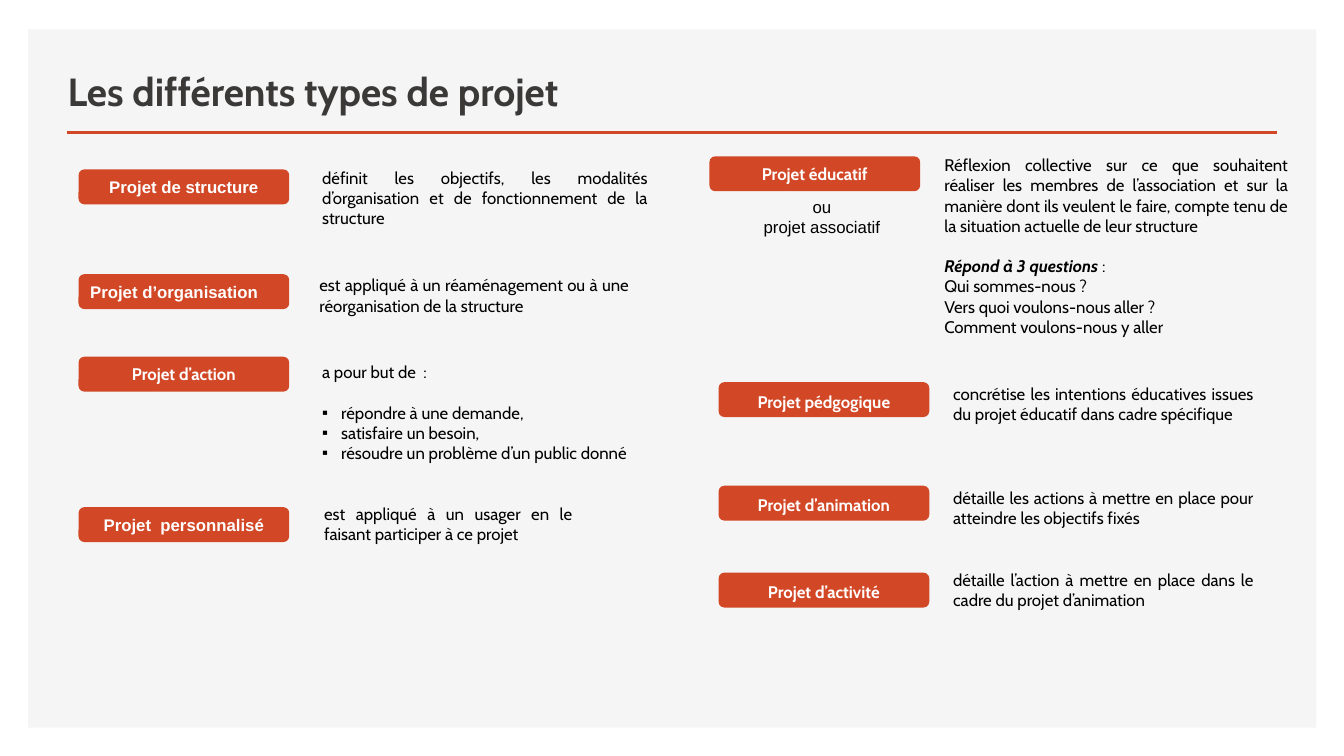
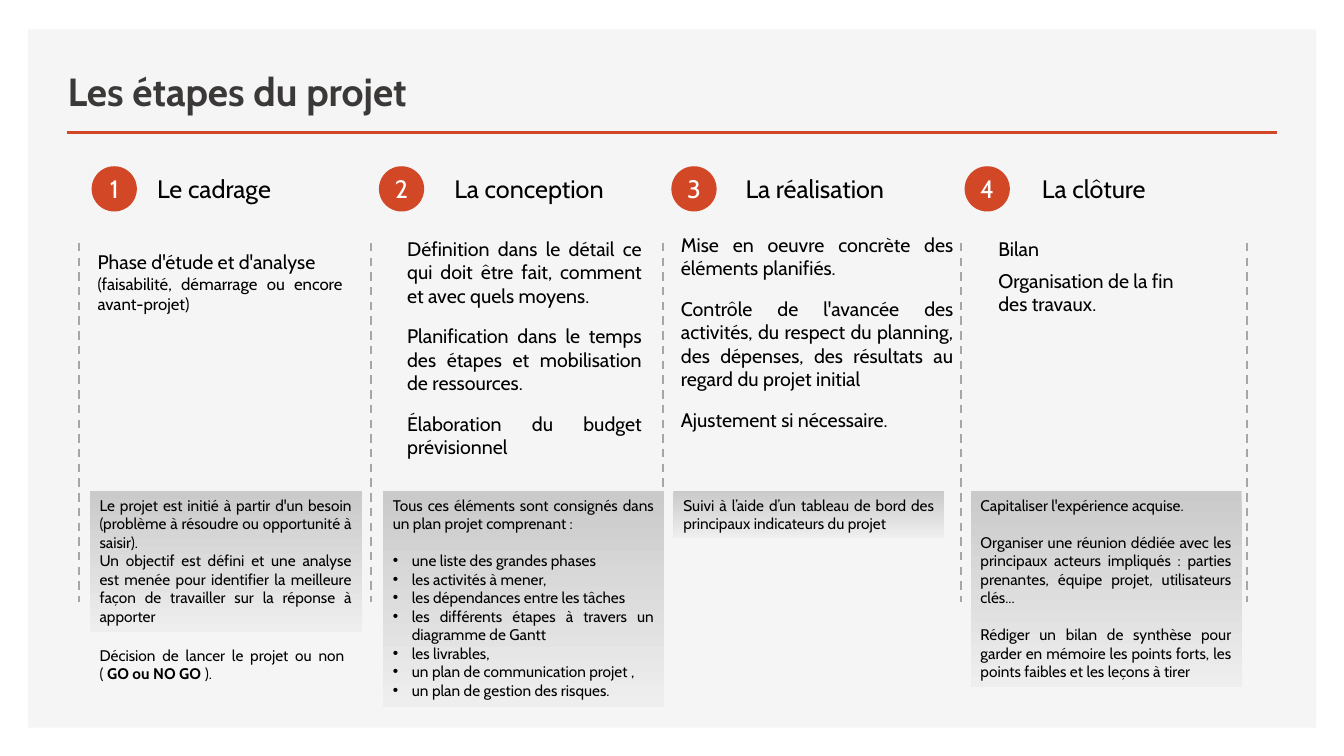
"""Build two slides on project types and project stages."""
from lxml import etree
from pptx import Presentation
from pptx.dml.color import RGBColor
from pptx.enum.dml import MSO_LINE
from pptx.enum.shapes import MSO_CONNECTOR, MSO_SHAPE
from pptx.enum.text import MSO_ANCHOR, PP_ALIGN
from pptx.oxml.ns import qn
from pptx.util import Cm, Pt

RECTANGLE, ROUNDED, OVAL = MSO_SHAPE.RECTANGLE, MSO_SHAPE.ROUNDED_RECTANGLE, MSO_SHAPE.OVAL
STRAIGHT = MSO_CONNECTOR.STRAIGHT
DASH = MSO_LINE.DASH
TOP, MIDDLE, BOTTOM = MSO_ANCHOR.TOP, MSO_ANCHOR.MIDDLE, MSO_ANCHOR.BOTTOM
LEFT, CENTER, JUSTIFY = PP_ALIGN.LEFT, PP_ALIGN.CENTER, PP_ALIGN.JUSTIFY

ORANGE = RGBColor(0xD2, 0x47, 0x26)
PANEL = RGBColor(0xF5, 0xF5, 0xF5)
TITLE_GREY = RGBColor(0x3B, 0x38, 0x38)
DASH_GREY = RGBColor(0xA6, 0xA6, 0xA6)
NOTE_DARK = RGBColor(0xCA, 0xCA, 0xCA)
NOTE_LIGHT = RGBColor(0xEE, 0xEE, 0xEE)
BLACK = RGBColor(0, 0, 0)
WHITE = RGBColor(0xFF, 0xFF, 0xFF)
FONT, LABEL_FONT = "Cabin", "Arial"
BULLETS = ("▪", "•")


def add_line(slide, start, end, color, width):
    """Draw a straight line between two points given in centimetres."""
    line = slide.shapes.add_connector(STRAIGHT, *map(Cm, start + end))
    line.line.color.rgb = color
    line.line.width = Pt(width)
    etree.SubElement(line._element.spPr, qn("a:effectLst"))
    return line


def add_block(slide, box, texts, kind=None, fill=None, size=12, font=FONT, color=BLACK,
              align=JUSTIFY, bold=False, gaps=(), indent=0):
    """Add a text box or filled shape; *stars* mark bold, a leading bullet makes a list item."""
    if kind is None:
        shape = slide.shapes.add_textbox(*map(Cm, box))
    else:
        shape = slide.shapes.add_shape(kind, *map(Cm, box))
        shape.shadow.inherit = False
        shape.line.fill.background()
        if fill is None:
            shape.fill.gradient()
            shape.fill.gradient_angle = 270
            for stop, stop_color in zip(shape.fill.gradient_stops, (NOTE_DARK, NOTE_LIGHT)):
                stop.color.rgb = stop_color
        else:
            shape.fill.solid()
            shape.fill.fore_color.rgb = fill
    frame = shape.text_frame
    frame.word_wrap = True
    frame.vertical_anchor = MIDDLE if fill else TOP
    frame.margin_left = Cm(0.25 + indent)
    for index, text in enumerate(texts):
        paragraph = frame.paragraphs[0] if index == 0 else frame.add_paragraph()
        paragraph.alignment = align
        if index in gaps:
            paragraph.space_before = Pt(gaps[index])
        if text.startswith(BULLETS):
            properties = paragraph._p.get_or_add_pPr()
            properties.set("marL", str(Cm(0.48)))
            properties.set("indent", str(-Cm(0.48)))
            etree.SubElement(properties, qn("a:buFont")).set("typeface", "Arial")
            etree.SubElement(properties, qn("a:buChar")).set("char", text[0])
            text = text[1:]
        for part, words in enumerate(text.split("*")):
            if words:
                run = paragraph.add_run()
                run.text = words
                run.font.name = font
                run.font.size = Pt(size)
                run.font.color.rgb = color
                run.font.bold = bold or part % 2 == 1
    return shape


presentation = Presentation()
presentation.slide_width = Cm(33.87)
presentation.slide_height = Cm(19.05)
layout = presentation.slide_layouts[5]
layout_title = layout.placeholders[0]
layout_title.left, layout_title.top = Cm(1.45), Cm(1.24)
layout_title.width, layout_title.height = Cm(24.13), Cm(1.78)

slides = []
for heading in ("Les différents types de projet", "Les étapes du projet"):
    slide = presentation.slides.add_slide(layout)
    title = slide.shapes.title
    title.text_frame.text = heading
    title.text_frame.vertical_anchor = BOTTOM
    paragraph = title.text_frame.paragraphs[0]
    paragraph.alignment = LEFT
    paragraph.font.name = FONT
    paragraph.font.size = Pt(28)
    paragraph.font.bold = True
    paragraph.font.color.rgb = TITLE_GREY
    slides.append(slide)
types_slide, stages_slide = slides

panel = add_block(types_slide, (0.71, 0.74, 32.46, 17.6), [], RECTANGLE, PANEL)
rule = add_line(types_slide, (1.68, 3.33), (32.18, 3.33), ORANGE, 2)
for position, shape in enumerate((panel, rule), start=2):
    layout.shapes.element.insert(position, shape.element)

project_types = [
    ("Projet de structure", LABEL_FONT, CENTER, 1, (1.98, 4.27), (7.87, 4.09, 8.71, 1.8),
     ["définit les objectifs, les modalités d’organisation et de fonctionnement de la structure"]),
    ("Projet d’organisation", LABEL_FONT, LEFT, 1, (1.98, 6.91), (7.8, 6.81, 8.31, 1.27),
     ["est appliqué à un réaménagement ou à une réorganisation de la structure"]),
    ("Projet d’action", FONT, CENTER, 1, (1.98, 8.99), (7.87, 8.99, 8.66, 2.82),
     ["a pour but de  :", "▪répondre à une demande,", "▪satisfaire un besoin,",
      "▪résoudre un problème d’un public donné"]),
    ("Projet  personnalisé", LABEL_FONT, CENTER, 1, (1.98, 12.78), (7.92, 12.57, 6.76, 1.27),
     ["est appliqué à un usager en le faisant participer à ce projet"]),
    ("Projet éducatif", FONT, CENTER, 1, (17.88, 3.94), (23.55, 3.78, 9.17, 5.38),
     ["Réflexion collective sur ce que souhaitent réaliser les membres de l’association et sur la "
      "manière dont ils veulent le faire, compte tenu de la situation actuelle de leur structure",
      "*Répond à 3 questions *:", "Qui sommes-nous ?", "Vers quoi voulons-nous aller ?",
      "Comment voulons-nous y aller"]),
    ("Projet pédgogique", FONT, CENTER, 1.2, (18.11, 9.63), (23.77, 9.55, 8.08, 1.8),
     ["concrétise les intentions éducatives issues du projet éducatif dans cadre spécifique"]),
    ("Projet d’animation", FONT, CENTER, 1.2, (18.11, 12.24), (23.77, 12.17, 8.08, 1.27),
     ["détaille les actions à mettre en place pour atteindre les objectifs fixés"]),
    ("Projet d’activité", FONT, CENTER, 1.2, (18.11, 14.43), (23.77, 14.22, 8.08, 1.27),
     ["détaille l’action à mettre en place dans le cadre du projet d’animation"]),
]
for name, font, align, spacing, corner, box, texts in project_types:
    label = add_block(types_slide, corner + (5.31, 0.88), [name], ROUNDED, ORANGE,
                      font=font, color=WHITE, align=align, bold=True)
    label.text_frame.paragraphs[0].line_spacing = spacing
    description = add_block(types_slide, box, texts, gaps={1: 14.6})
    for paragraph in description.text_frame.paragraphs:
        for run in paragraph.runs:
            run.font.italic = run.font.bold
add_block(types_slide, (18.11, 4.83, 5.21, 1.27), ["ou", "projet associatif"],
          font=LABEL_FONT, align=CENTER)

for x in (1.98, 9.35, 16.71, 24.21, 31.42):
    separator = add_line(stages_slide, (x, 6.12), (x, 15.16), DASH_GREY, 1.5)
    separator.line.dash_style = DASH

stages = [
    ("Le cadrage", 2.31, 3.71, (2.21, 6.17, 6.68, 1.88), 0, 0, JUSTIFY,
     ["Phase d'étude et d'analyse", "(faisabilité, démarrage ou encore avant-projet)"],
     (2.26, 12.37, 6.86, 3.56), {},
     ["Le projet est initié à partir d'un besoin (problème à résoudre ou opportunité à saisir).",
      "Un objectif est défini et une analyse est menée pour identifier la meilleure façon de "
      "travailler sur la réponse à apporter"]),
    ("La conception", 9.55, 11.2, (9.55, 5.84, 6.88, 5.89), 0.46, 12, JUSTIFY,
     ["Définition dans le détail ce qui doit être fait, comment et avec quels moyens.",
      "Planification dans le temps des étapes et mobilisation de ressources.",
      "Élaboration du budget prévisionnel"],
     (9.65, 12.37, 7.09, 5.44), {1: 13.3},
     ["Tous ces éléments sont consignés dans un plan projet comprenant :",
      "•une liste des grandes phases", "•les activités à mener,",
      "•les dépendances entre les tâches",
      "•les différents étapes à travers un diagramme de Gantt", "•les livrables,",
      "•un plan de communication projet ,", "•un plan de gestion des risques."]),
    ("La réalisation", 16.92, 18.54, (16.61, 5.74, 7.67, 5.89), 0.3, 12, JUSTIFY,
     ["Mise en oeuvre concrète des éléments planifiés.",
      "Contrôle de l'avancée des activités, du respect du planning, des dépenses, des résultats "
      "au regard du projet initial",
      "Ajustement si nécessaire."],
     (16.97, 12.37, 6.83, 1.19), {},
     ["Suivi à l’aide d’un tableau de bord des principaux indicateurs du projet"]),
    ("La clôture", 24.31, 26.01, (24.61, 5.84, 5.79, 2.26), 0.3, 6, LEFT,
     ["Bilan", "Organisation de la fin des travaux."],
     (24.46, 12.37, 6.83, 4.95), {1: 13.3, 2: 13.3},
     ["Capitaliser l'expérience acquise.",
      "Organiser une réunion dédiée avec les principaux acteurs impliqués : parties prenantes, "
      "équipe projet, utilisateurs clés...",
      "Rédiger un bilan de synthèse pour garder en mémoire les points forts, les points faibles "
      "et les leçons à tirer"]),
]
details = []
for number, stage in enumerate(stages, start=1):
    (name, circle_left, name_left, detail_box, indent, gap, align, detail_texts,
     note_box, note_gaps, note_texts) = stage
    circle = add_block(stages_slide, (circle_left, 4.19, 1.14, 1.14), [str(number)], OVAL, ORANGE,
                       size=18, color=WHITE, align=CENTER)
    frame = circle.text_frame
    frame.margin_left = frame.margin_right = frame.margin_top = frame.margin_bottom = 0
    add_block(stages_slide, (name_left, 4.24, 4.93, 1.02), [name], size=18, align=LEFT)
    details.append(add_block(stages_slide, detail_box, detail_texts, size=14, align=align,
                             gaps={1: gap, 2: gap}, indent=indent))
    add_block(stages_slide, note_box, note_texts, RECTANGLE, size=11, gaps=note_gaps)
details[0].text_frame.paragraphs[1].runs[0].font.size = Pt(12)
add_block(stages_slide, (2.26, 16.15, 6.68, 1.19),
          ["Décision de lancer le projet ou non ( *GO ou NO GO *)."], size=11)

presentation.save("out.pptx")
